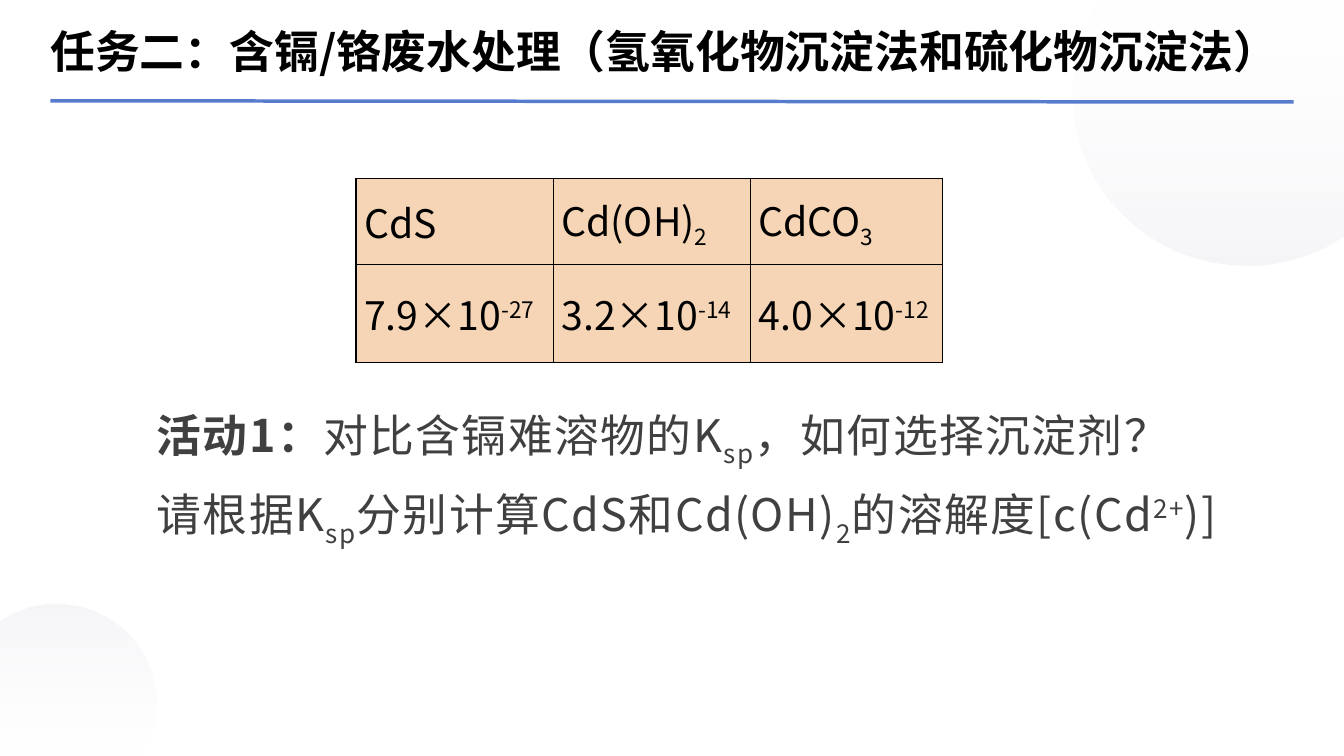
"""Build the slide on treating cadmium and chromium waste water by precipitation."""
from dataclasses import dataclass

from lxml.etree import SubElement
from pptx import Presentation
from pptx.dml.color import RGBColor
from pptx.enum.shapes import MSO_CONNECTOR
from pptx.enum.text import MSO_ANCHOR
from pptx.oxml import parse_xml
from pptx.oxml.ns import nsdecls, qn
from pptx.slide import Slide
from pptx.text.text import TextFrame, _Paragraph
from pptx.util import Cm, Pt

FONT = "Noto Sans CJK SC"
COLORS = {"ink": "000000", "body": "404040", "rule": "577CCE", "cell": "F5D5B5",
          "fade_light": "FFFFFF", "fade_dark": "D8D8E4"}
SUB, SUPER = -25, 30
Point = tuple[float, float]


@dataclass
class Piece:
    """A run of text with its baseline shift in percent."""
    text: str
    shift: int = 0
    bold: bool = False


@dataclass
class TextBlock:
    """A text box, in centimetres."""
    left: float
    top: float
    width: float
    height: float
    pieces: list[Piece]
    color: str = "body"
    letter_spacing: int = 100
    is_title: bool = False


@dataclass
class Disc:
    """A cut-off circle: straight corner points, then Bezier points, in centimetres."""
    corner: list[Point]
    arc: list[Point]
    rotation: int = 0


DISCS = [
    Disc([(27.74, 0), (33.87, 0), (33.87, 5.94), (33.53, 6.15)],
         [(32.89, 6.48), (32.18, 6.68), (31.42, 6.68),
          (28.98, 6.68), (27.03, 4.75), (27.03, 2.34),
          (27.03, 1.6), (27.2, 0.89), (27.56, 0.28)]),
    Disc([(0.41, 15.21), (3.94, 15.21), (3.94, 18.61), (3.74, 18.74)],
         [(3.38, 18.92), (2.97, 19.05), (2.54, 19.05),
          (1.15, 19.05), (0, 17.93), (0, 16.56),
          (0, 16.12), (0.13, 15.69), (0.31, 15.36)], rotation=180),
]
TEXTS = [
    TextBlock(1.27, 0.43, 31.32, 1.7,
              [Piece("任务二：含镉/铬废水处理（氢氧化物沉淀法和硫化物沉淀法）", bold=True)],
              color="ink", letter_spacing=0, is_title=True),
    TextBlock(3.7, 10.14, 26.75, 1.63,
              [Piece("活动1：", bold=True), Piece("对比含镉难溶物的K"), Piece("sp", SUB),
               Piece("，如何选择沉淀剂？")]),
    TextBlock(3.7, 12.15, 28.9, 1.63,
              [Piece("请根据K"), Piece("sp", SUB), Piece("分别计算CdS和Cd(OH)"), Piece("2", SUB),
               Piece("的溶解度[c(Cd"), Piece("2+", SUPER), Piece(")]")]),
]
SOLUBILITY = [
    [[Piece("CdS")], [Piece("Cd(OH)"), Piece("2", SUB)], [Piece("CdCO"), Piece("3", SUB)]],
    [[Piece(f"{factor}×10"), Piece(power, SUPER)]
     for factor, power in (("7.9", "-27"), ("3.2", "-14"), ("4.0", "-12"))],
]
COLUMN_WIDTHS = [4.97, 4.97, 4.85]
ROW_HEIGHTS = [2.17, 2.47]


def rgb(name: str) -> RGBColor:
    """Look up a named colour."""
    return RGBColor.from_string(COLORS[name])


def write(paragraph: _Paragraph, pieces: list[Piece], size: int, color: str,
          letter_spacing: int = 0) -> None:
    """Add the pieces to a paragraph run by run."""
    for piece in pieces:
        run = paragraph.add_run()
        run.text = piece.text
        run.font.size = Pt(size)
        run.font.name = FONT
        run.font.bold = piece.bold
        run.font.color.rgb = rgb(color)
        properties = run.font._element
        SubElement(properties, qn("a:ea")).set("typeface", FONT)
        if piece.shift:
            properties.set("baseline", str(piece.shift * 1000))
        if letter_spacing:
            properties.set("spc", str(letter_spacing))


def draw_disc(slide: Slide, disc: Disc) -> None:
    """Draw a faded disc clipped at its slide corner."""
    outline = [(Cm(x), Cm(y)) for x, y in disc.corner + disc.arc]
    builder = slide.shapes.build_freeform(*outline[0])
    builder.add_line_segments(outline[1:])
    shape = builder.convert_to_shape()
    shape.rotation = disc.rotation
    shape.shadow.inherit = False
    shape.line.fill.background()
    geometry = shape._element.spPr.find(qn("a:custGeom"))
    arc_lines = list(geometry.iter(qn("a:lnTo")))[-len(disc.arc):]
    for first in range(0, len(arc_lines), 3):
        curve, *rest = arc_lines[first:first + 3]
        bezier = parse_xml(f'<a:cubicBezTo {nsdecls("a")}/>')
        curve.addprevious(bezier)
        for line in (curve, *rest):
            bezier.append(line[0])
            line.getparent().remove(line)
    stops = "".join(
        f'<a:gs pos="{position}"><a:srgbClr val="{COLORS[color]}">'
        f'<a:alpha val="{alpha}"/></a:srgbClr></a:gs>'
        for position, color, alpha in ((0, "fade_light", 10000), (100000, "fade_dark", 24000))
    )
    geometry.addnext(parse_xml(
        f'<a:gradFill {nsdecls("a")} rotWithShape="1"><a:gsLst>{stops}</a:gsLst>'
        '<a:lin ang="5400000" scaled="0"/></a:gradFill>'))


def draw_rule(slide: Slide) -> None:
    """Draw the line under the title."""
    rule = slide.shapes.add_connector(
        MSO_CONNECTOR.STRAIGHT, Cm(1.27), Cm(2.54), Cm(32.6), Cm(2.57))
    rule.line.color.rgb = rgb("rule")
    rule.line.width = Pt(2.5)
    SubElement(rule._element.spPr, qn("a:effectLst"))


def clear_insets(frame: TextFrame) -> None:
    """Remove the inner margins of a text frame."""
    frame.margin_left = frame.margin_right = frame.margin_top = frame.margin_bottom = 0


def draw_text(slide: Slide, block: TextBlock) -> None:
    """Draw a wrapped text box."""
    frame = slide.shapes.add_textbox(
        Cm(block.left), Cm(block.top), Cm(block.width), Cm(block.height)).text_frame
    frame.word_wrap = True
    if block.is_title:
        clear_insets(frame)
        frame.vertical_anchor = MSO_ANCHOR.MIDDLE
    write(frame.paragraphs[0], block.pieces, 32, block.color, block.letter_spacing)


def draw_table(slide: Slide) -> None:
    """Draw the table of solubility products."""
    table = slide.shapes.add_table(
        len(ROW_HEIGHTS), len(COLUMN_WIDTHS), Cm(8.97), Cm(4.5),
        Cm(sum(COLUMN_WIDTHS)), Cm(sum(ROW_HEIGHTS))).table
    for column, width in zip(table.columns, COLUMN_WIDTHS):
        column.width = Cm(width)
    for row, height, contents in zip(table.rows, ROW_HEIGHTS, SOLUBILITY):
        row.height = Cm(height)
        for cell, pieces in zip(row.cells, contents):
            cell.vertical_anchor = MSO_ANCHOR.MIDDLE
            cell.margin_left = cell.margin_right = Cm(0.21)
            write(cell.text_frame.paragraphs[0], pieces, 28, "ink")
            properties = cell._tc.get_or_add_tcPr()
            for side in ("lnL", "lnR", "lnT", "lnB"):
                properties.append(parse_xml(
                    f'<a:{side} {nsdecls("a")} w="12700"><a:solidFill>'
                    f'<a:srgbClr val="{COLORS["ink"]}"/></a:solidFill></a:{side}>'))
            cell.fill.solid()
            cell.fill.fore_color.rgb = rgb("cell")


def main() -> None:
    """Build and save the slide."""
    deck = Presentation()
    deck.slide_width, deck.slide_height = Cm(33.87), Cm(19.05)
    slide = deck.slides.add_slide(deck.slide_layouts[6])
    for disc in DISCS:
        draw_disc(slide, disc)
    draw_rule(slide)
    title, *activities = TEXTS
    draw_text(slide, title)
    draw_table(slide)
    for activity in activities:
        draw_text(slide, activity)
    deck.save("out.pptx")


if __name__ == "__main__":
    main()
